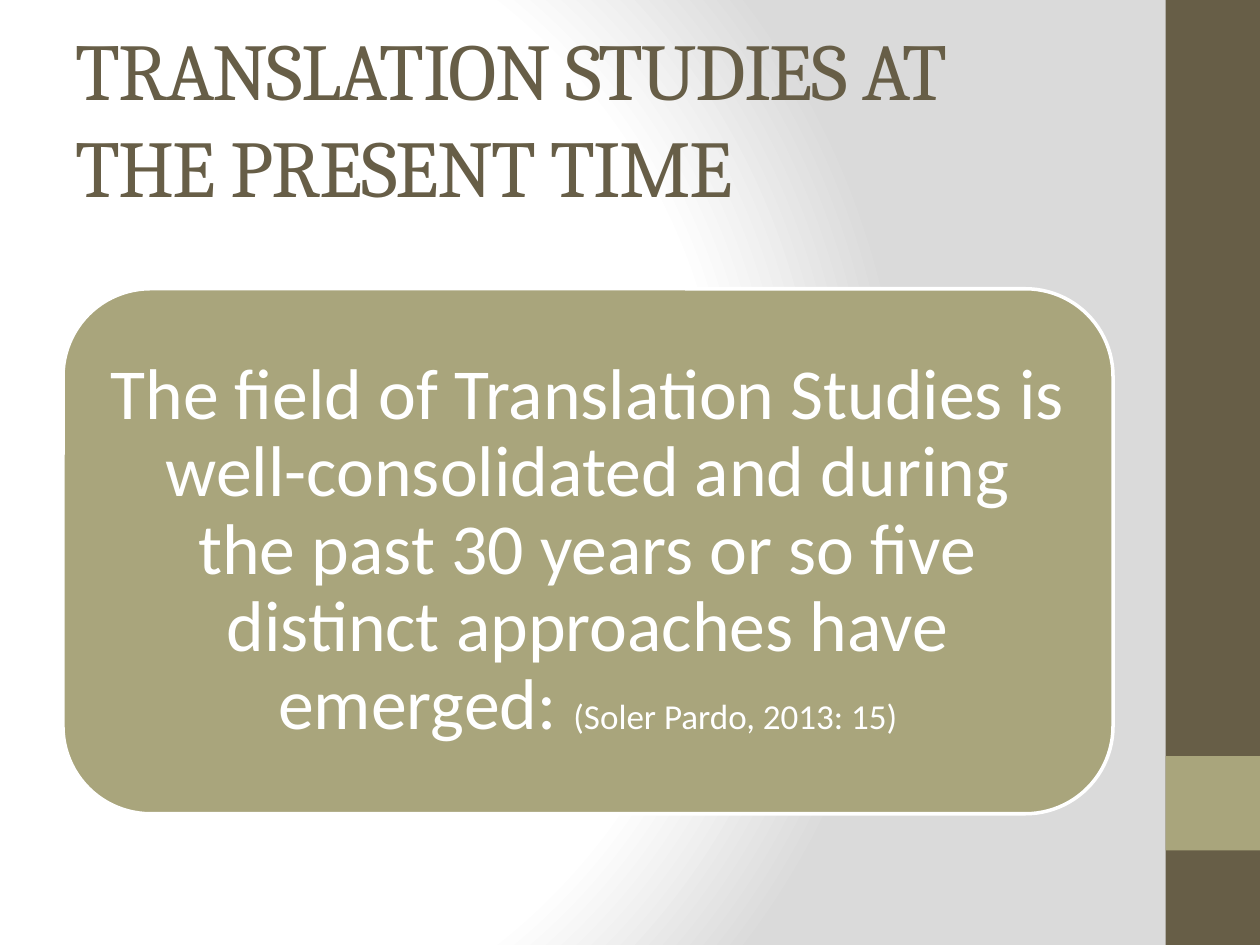
from dataclasses import dataclass

from pptx import Presentation
from pptx.dml.color import RGBColor
from pptx.enum.shapes import MSO_SHAPE as Shape
from pptx.enum.text import MSO_ANCHOR as Anchor, MSO_AUTO_SIZE as AutoSize, PP_ALIGN as Align
from pptx.oxml import parse_xml
from pptx.oxml.ns import nsdecls
from pptx.util import Pt


@dataclass(frozen=True)
class Theme:
    dark: str = "675E47"
    accent: str = "A9A57C"
    white: str = "FFFFFF"
    shade: str = "DADADA"
    title_font: str = "Cambria"
    body_font: str = "Calibri"
    title_size: int = 46
    body_size: int = 41
    citation_size: int = 20


THEME = Theme()
WIDTH, HEIGHT = 720, 540
BAR_WIDTH = 54
BAR_LEFT = WIDTH - BAR_WIDTH
MARGIN, CONTENT_WIDTH = 36, 600


def set_background(slide):
    """Fill the slide with a circular gradient, centred left of the middle."""
    stops = "".join(
        f'<a:gs pos="{percent * 1000}"><a:srgbClr val="{color}"/></a:gs>'
        for percent, color in ((0, THEME.white), (75, THEME.white), (100, THEME.shade))
    )
    background = parse_xml(
        f'<p:bg {nsdecls("p", "a")}><p:bgPr><a:gradFill rotWithShape="1">'
        f'<a:gsLst>{stops}</a:gsLst><a:path path="circle">'
        '<a:fillToRect l="20000" t="50000" r="100000" b="50000"/></a:path>'
        "</a:gradFill><a:effectLst/></p:bgPr></p:bg>"
    )
    slide.element.cSld.insert(0, background)


def add_block(slide, kind, left, top, width, height, color):
    shape = slide.shapes.add_shape(kind, Pt(left), Pt(top), Pt(width), Pt(height))
    shape.shadow.inherit = False
    shape.fill.solid()
    shape.fill.fore_color.rgb = RGBColor.from_string(color)
    shape.line.fill.background()
    return shape


def add_run(paragraph, text, font, size, color):
    run = paragraph.add_run()
    run.text = text
    run.font.name = font
    run.font.size = Pt(size)
    run.font.color.rgb = RGBColor.from_string(color)
    return run


def prepare_text(shape, inset_x, inset_y):
    """Centre wrapped text vertically and return the first paragraph."""
    frame = shape.text_frame
    frame.word_wrap = True
    frame.auto_size = AutoSize.NONE
    frame.vertical_anchor = Anchor.MIDDLE
    frame.margin_left = frame.margin_right = Pt(inset_x)
    frame.margin_top = frame.margin_bottom = Pt(inset_y)
    return frame.paragraphs[0]


def set_title(slide, text):
    title = slide.shapes.title
    title.left, title.top = Pt(MARGIN), Pt(21.6)
    title.width, title.height = Pt(CONTENT_WIDTH), Pt(90)
    paragraph = prepare_text(title, 7.2, 3.6)
    paragraph.alignment = Align.LEFT
    run = add_run(paragraph, text, THEME.title_font, THEME.title_size, THEME.dark)
    run.font._element.set("spc", "-100")


def add_statement(slide, statement, citation):
    card = add_block(slide, Shape.ROUNDED_RECTANGLE, MARGIN, 165, CONTENT_WIDTH, 300, THEME.accent)
    card.line.color.rgb = RGBColor.from_string(THEME.white)
    card.line.width = Pt(2)
    paragraph = prepare_text(card, 12.3, 12.3)
    paragraph.alignment = Align.CENTER
    paragraph.line_spacing = 0.9
    for text, size in ((statement, THEME.body_size), (citation, THEME.citation_size)):
        add_run(paragraph, text, THEME.body_font, size, THEME.white)


def main():
    presentation = Presentation()
    presentation.slide_width, presentation.slide_height = Pt(WIDTH), Pt(HEIGHT)
    title_only = presentation.slide_layouts.get_by_name("Title Only")
    slide = presentation.slides.add_slide(title_only)
    set_background(slide)
    add_block(slide, Shape.RECTANGLE, BAR_LEFT, 0, BAR_WIDTH, HEIGHT, THEME.dark)
    add_block(slide, Shape.RECTANGLE, BAR_LEFT, 432, BAR_WIDTH, BAR_WIDTH, THEME.accent)
    set_title(slide, "TRANSLATION STUDIES AT THE PRESENT TIME")
    add_statement(
        slide,
        "The field of Translation Studies is well-consolidated and during "
        "the past 30 years or so five distinct approaches have emerged: ",
        "(Soler Pardo, 2013: 15)",
    )
    presentation.save("out.pptx")


if __name__ == "__main__":
    main()
